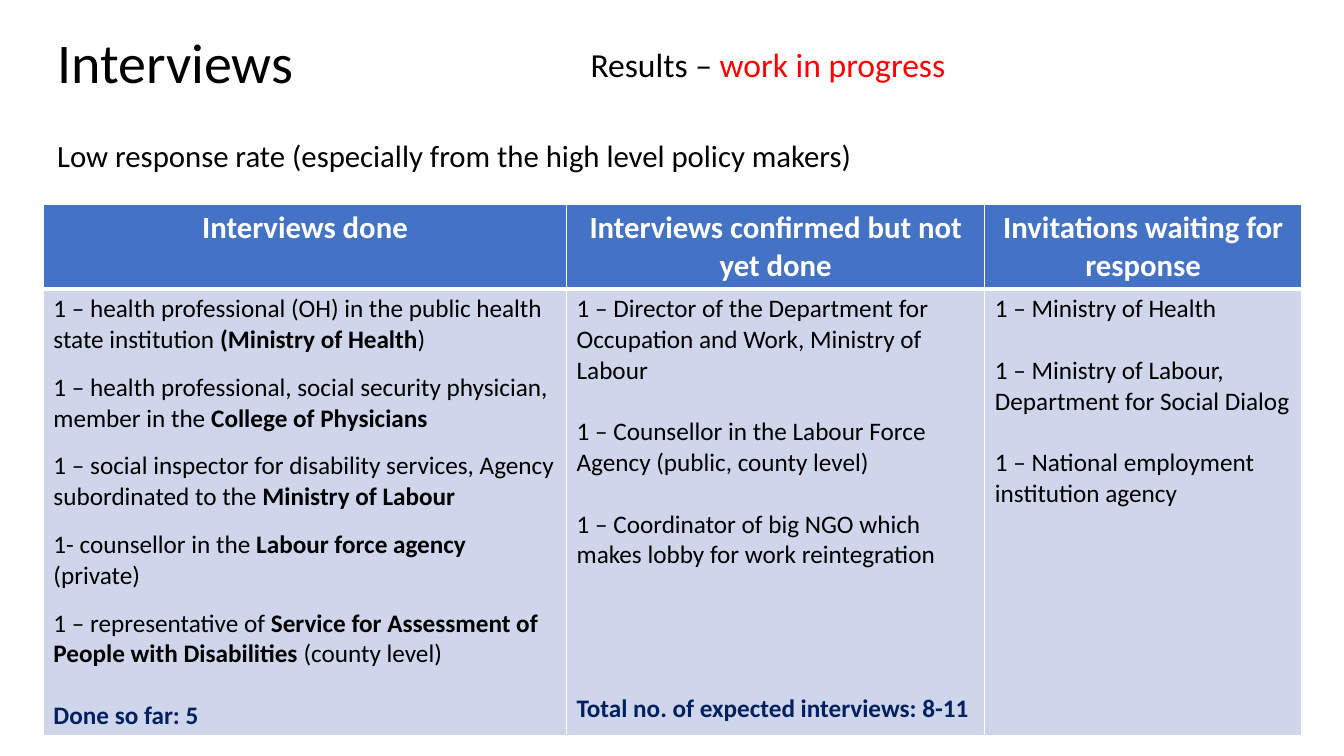
import pptx
import pptx.dml.color
import pptx.enum.text
import pptx.oxml
import pptx.oxml.ns
import pptx.util

Pt = pptx.util.Pt
ALIGN = pptx.enum.text.PP_ALIGN
ANCHOR = pptx.enum.text.MSO_ANCHOR
BLACK, WHITE, RED, NAVY = "000000", "FFFFFF", "FF0000", "002060"
HEADER_FILL, BODY_FILL = "4472C4", "CFD5EA"
COLUMN_WIDTHS = [373.7, 298.8, 226.1]
ROW_HEIGHTS = [60, 319]
HEADERS = ["Interviews done", "Interviews confirmed but not yet done",
           "Invitations waiting for response"]
SMALL_GAP, LINE_GAP = 12.2, 22

# Each paragraph is a list of spans; every second span is bold.
DONE = [
    ["1 – health professional (OH) in the public health state institution ",
     "(Ministry of Health", ")"],
    ["1 – health professional, social security physician, member in the ",
     "College of Physicians"],
    ["1 – social inspector for disability services, Agency subordinated to the ",
     "Ministry of Labour"],
    ["1- counsellor in the ", "Labour force agency ", "(private)"],
    ["1 – representative of ",
     "Service for Assessment of People with Disabilities ", "(county level)"],
]
CONFIRMED = [
    ["1 – Director of the Department for Occupation and Work, Ministry of Labour"],
    ["1 – Counsellor in the Labour Force Agency (public, county level)"],
    ["1 – Coordinator of big NGO which makes lobby for work reintegration"],
]
WAITING = [
    ["1 – Ministry of Health"],
    ["1 – Ministry of Labour, Department for Social Dialog"],
    ["1 – National employment institution agency"],
]
# Paragraphs, gap between them, closing line, gap above the closing line
COLUMNS = [
    (DONE, SMALL_GAP, "Done so far: 5", LINE_GAP),
    (CONFIRMED, LINE_GAP, "Total no. of expected interviews: 8-11", 4 * LINE_GAP),
    (WAITING, LINE_GAP, None, 0),
]


def rgb(value):
    return pptx.dml.color.RGBColor.from_string(value)


def set_all(target, values):
    for name, value in values.items():
        setattr(target, name, value)


def add_span(para, text, size, color=BLACK, bold=False):
    span = para.add_run()
    span.text = text
    set_all(span.font, {"name": "Calibri", "size": Pt(size), "bold": bold})
    span.font.color.rgb = rgb(color)


def next_para(frame, first, **values):
    para = frame.paragraphs[0] if first else frame.add_paragraph()
    set_all(para, values)
    return para


def add_text_box(page, place, spans, size, **values):
    """Add one paragraph made of (text, colour) spans."""
    box = page.shapes.add_textbox(*map(Pt, place))
    box.text_frame.word_wrap = True
    para = next_para(box.text_frame, True, **values)
    for text, color in spans:
        add_span(para, text, size, color)


def format_title(page, text):
    title = page.shapes.title
    set_all(title, dict(zip(("left", "top", "width", "height"),
                            map(Pt, (33.8, 18.7, 198, 55.4)))))
    frame = title.text_frame
    set_all(frame, {"vertical_anchor": ANCHOR.MIDDLE, "word_wrap": True,
                    "auto_size": pptx.enum.text.MSO_AUTO_SIZE.NONE})
    para = next_para(frame, True, alignment=ALIGN.LEFT, line_spacing=0.9)
    add_span(para, text, 40)


def format_cell(cell, fill, bottom_width):
    cell.fill.solid()
    cell.fill.fore_color.rgb = rgb(fill)
    properties = cell._tc.get_or_add_tcPr()
    widths = {"lnL": 1, "lnR": 1, "lnT": 1, "lnB": bottom_width}
    for index, (side, width) in enumerate(widths.items()):
        properties.insert(index, pptx.oxml.parse_xml(
            f'<a:{side} {pptx.oxml.ns.nsdecls("a")} w="{Pt(width)}"><a:solidFill>'
            f'<a:srgbClr val="{WHITE}"/></a:solidFill></a:{side}>'))


def fill_body_cell(cell, paragraphs, gap, closing, closing_gap):
    frame = cell.text_frame
    for index, spans in enumerate(paragraphs):
        para = next_para(frame, index == 0, space_before=Pt(gap if index else 0))
        for position, text in enumerate(spans):
            add_span(para, text, 18, bold=position % 2 == 1)
    if closing:
        para = next_para(frame, False, space_before=Pt(closing_gap))
        add_span(para, closing, 18, NAVY, True)


def add_interview_table(page):
    table = page.shapes.add_table(
        2, len(HEADERS), Pt(31), Pt(146.2),
        Pt(sum(COLUMN_WIDTHS)), Pt(sum(ROW_HEIGHTS))).table
    for row, height in zip(table.rows, ROW_HEIGHTS):
        row.height = Pt(height)
    for index, (width, header, content) in enumerate(
            zip(COLUMN_WIDTHS, HEADERS, COLUMNS)):
        table.columns[index].width = Pt(width)
        head, body = table.cell(0, index), table.cell(1, index)
        format_cell(head, HEADER_FILL, 3)
        format_cell(body, BODY_FILL, 1)
        para = next_para(head.text_frame, True, alignment=ALIGN.CENTER)
        add_span(para, header, 22, WHITE, True)
        fill_body_cell(body, *content)


def main():
    deck = pptx.Presentation()
    set_all(deck, {"slide_width": Pt(960), "slide_height": Pt(540)})
    page = deck.slides.add_slide(deck.slide_layouts.get_by_name("Title Only"))
    format_title(page, "Interviews")
    add_text_box(page, (33.8, 97.2, 898.6, 36),
                 [("Low response rate (especially from the high level policy makers)",
                   BLACK)], 22, line_spacing=0.9)
    add_interview_table(page)
    add_text_box(page, (414.7, 28.1, 323.3, 36),
                 [("Results – ", BLACK), ("work in progress", RED)], 24)
    deck.save("out.pptx")


if __name__ == "__main__":
    main()
